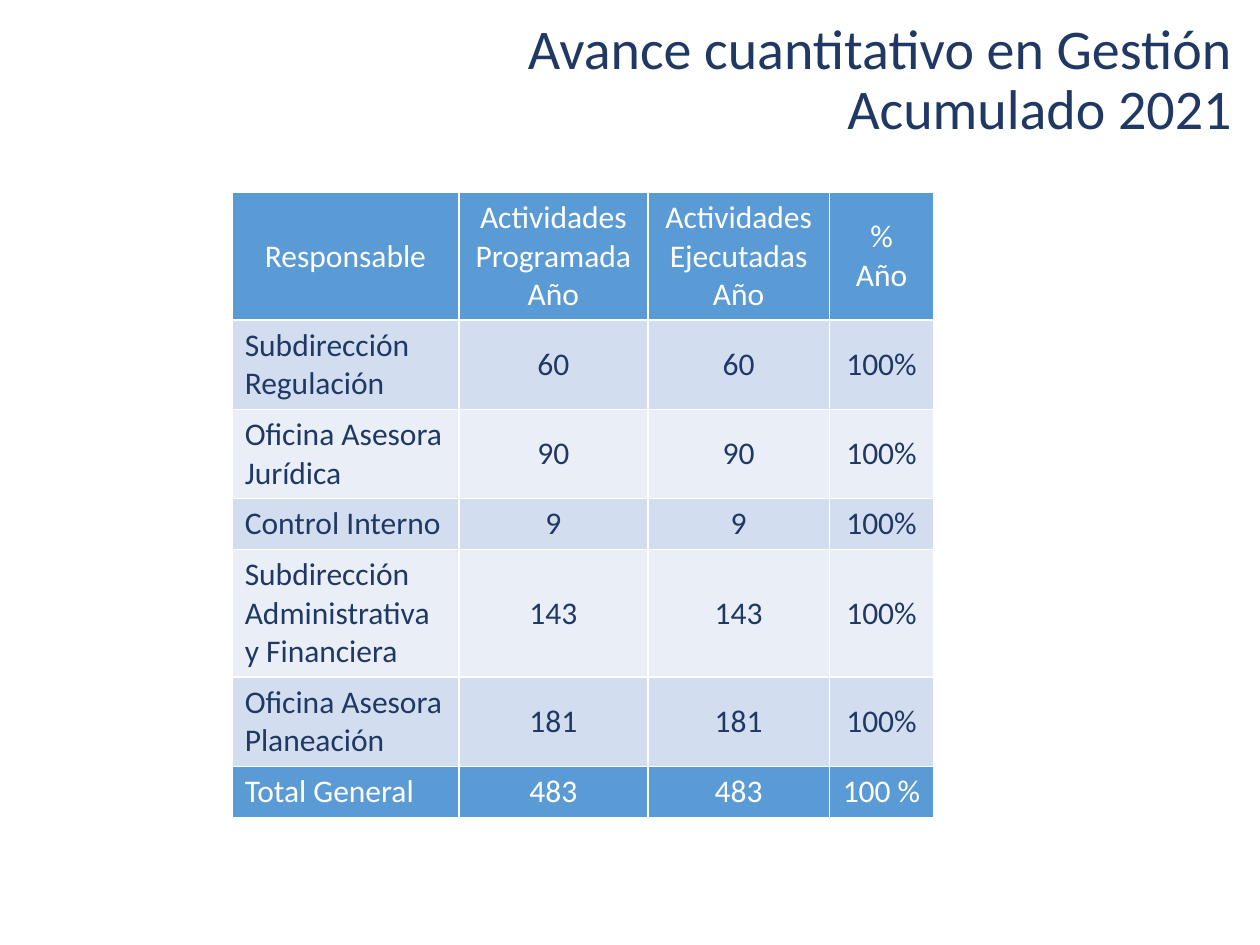
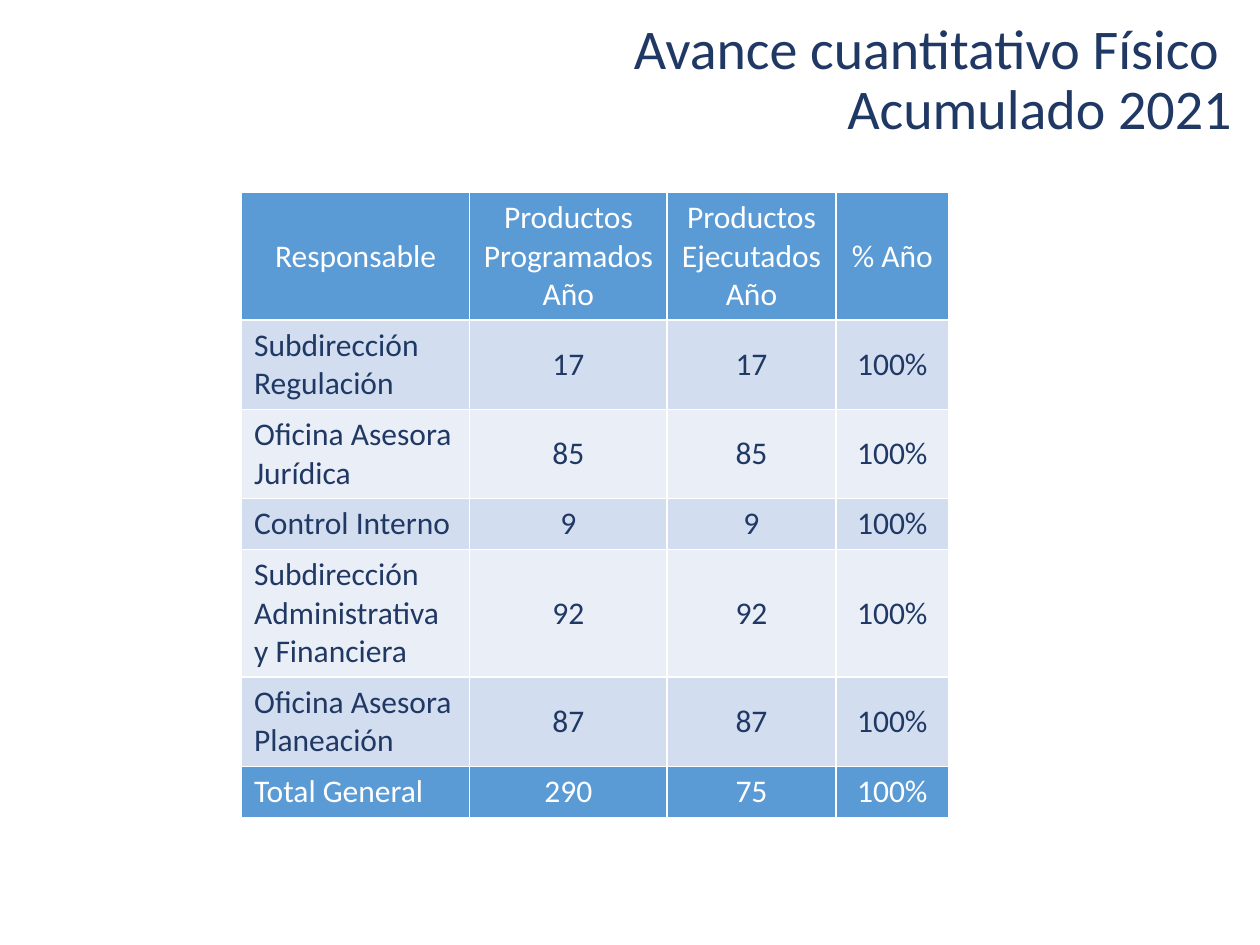
import pptx
import pptx.dml.color
import pptx.enum.text
import pptx.oxml
import pptx.oxml.ns
import pptx.util
from dataclasses import dataclass

Cm, Pt = pptx.util.Cm, pptx.util.Pt
ALIGN = pptx.enum.text.PP_ALIGN
ANCHOR = pptx.enum.text.MSO_ANCHOR


@dataclass(frozen=True)
class Theme:
    font: str = "Calibri"
    navy: str = "203864"
    blue: str = "5B9BD5"
    white: str = "FFFFFF"
    bands: tuple = ("D2DEEF", "EAEFF7")
    title_size: int = 32
    cell_size: int = 18
    border: int = 1


THEME = Theme()

RESPONSIBLE = [
    ("Subdirección Regulación", 2),
    ("Oficina Asesora Jurídica", 2),
    ("Control Interno", 1),
    ("Subdirección Administrativa y Financiera", 3),
    ("Oficina Asesora Planeación", 2),
    ("Total General", 1),
]
HEADER_LINES = 3

SLIDES = [
    dict(
        title=["Avance cuantitativo en Gestión", "Acumulado 2021"],
        header=["Responsable", "Actividades Programada Año",
                "Actividades Ejecutadas Año", "% Año"],
        values=[("60", "60", "100%"), ("90", "90", "100%"), ("9", "9", "100%"),
                ("143", "143", "100%"), ("181", "181", "100%"),
                ("483", "483", "100 %")],
        left=4.68,
        widths=[4.57, 3.81, 3.66, 2.1],
    ),
    dict(
        title=["Avance cuantitativo Físico ", "Acumulado 2021"],
        header=["Responsable", "Productos Programados Año",
                "Productos Ejecutados Año", "% Año"],
        values=[("17", "17", "100%"), ("85", "85", "100%"), ("9", "9", "100%"),
                ("92", "92", "100%"), ("87", "87", "100%"),
                ("290", "75", "100%")],
        left=4.87,
        widths=[4.6, 3.98, 3.4, 2.28],
    ),
]

TITLE_BOX = (5.56, 0.3, 19.53, 2.75)
TABLE_TOP = 3.88
LINE_HEIGHT = 0.77
ROW_PADDING = 0.26


def rgb(color):
    return pptx.dml.color.RGBColor.from_string(color)


def write(tf, lines, size, color, align=ALIGN.LEFT, spacing=None):
    tf.word_wrap = True
    for i, line in enumerate(lines):
        p = tf.add_paragraph() if i else tf.paragraphs[0]
        p.alignment = align
        p.line_spacing = spacing
        r = p.add_run()
        r.text = line
        r.font.name = THEME.font
        r.font.size = Pt(size)
        r.font.bold = False
        r.font.color.rgb = rgb(color)


def set_borders(cell):
    tc_pr = cell._tc.get_or_add_tcPr()
    for i, side in enumerate(("lnL", "lnR", "lnT", "lnB")):
        tc_pr.insert(i, pptx.oxml.parse_xml(
            f'<a:{side} {pptx.oxml.ns.nsdecls("a")} w="{Pt(THEME.border)}">'
            f'<a:solidFill><a:srgbClr val="{THEME.white}"/></a:solidFill></a:{side}>'))


def add_title(s, content):
    sp = s.shapes.add_textbox(*map(Cm, TITLE_BOX))
    write(sp.text_frame, content["title"], THEME.title_size, THEME.navy,
          align=ALIGN.RIGHT, spacing=0.9)


def add_progress_table(s, content):
    rows = [content["header"]]
    rows += [[name, *vals] for (name, _), vals in zip(RESPONSIBLE, content["values"])]
    line_counts = [HEADER_LINES] + [count for _, count in RESPONSIBLE]
    heights = [ROW_PADDING + LINE_HEIGHT * count for count in line_counts]
    widths = content["widths"]
    table = s.shapes.add_table(
        len(rows), len(widths), Cm(content["left"]), Cm(TABLE_TOP),
        Cm(sum(widths)), Cm(sum(heights))).table
    for column, width in zip(table.columns, widths):
        column.width = Cm(width)
    last = len(rows) - 1
    for i, values in enumerate(rows):
        table.rows[i].height = Cm(heights[i])
        accent = i in (0, last)
        fill = THEME.blue if accent else THEME.bands[(i - 1) % 2]
        for j, value in enumerate(values):
            cell = table.cell(i, j)
            cell.fill.solid()
            cell.fill.fore_color.rgb = rgb(fill)
            cell.vertical_anchor = ANCHOR.MIDDLE
            set_borders(cell)
            write(cell.text_frame, [value], THEME.cell_size,
                  THEME.white if accent else THEME.navy,
                  align=ALIGN.LEFT if i and j == 0 else ALIGN.CENTER)


def main():
    prs = pptx.Presentation()
    prs.slide_width, prs.slide_height = Cm(25.4), Cm(19.05)
    for content in SLIDES:
        s = prs.slides.add_slide(prs.slide_layouts[6])
        add_title(s, content)
        add_progress_table(s, content)
    prs.save("out.pptx")


if __name__ == "__main__":
    main()
